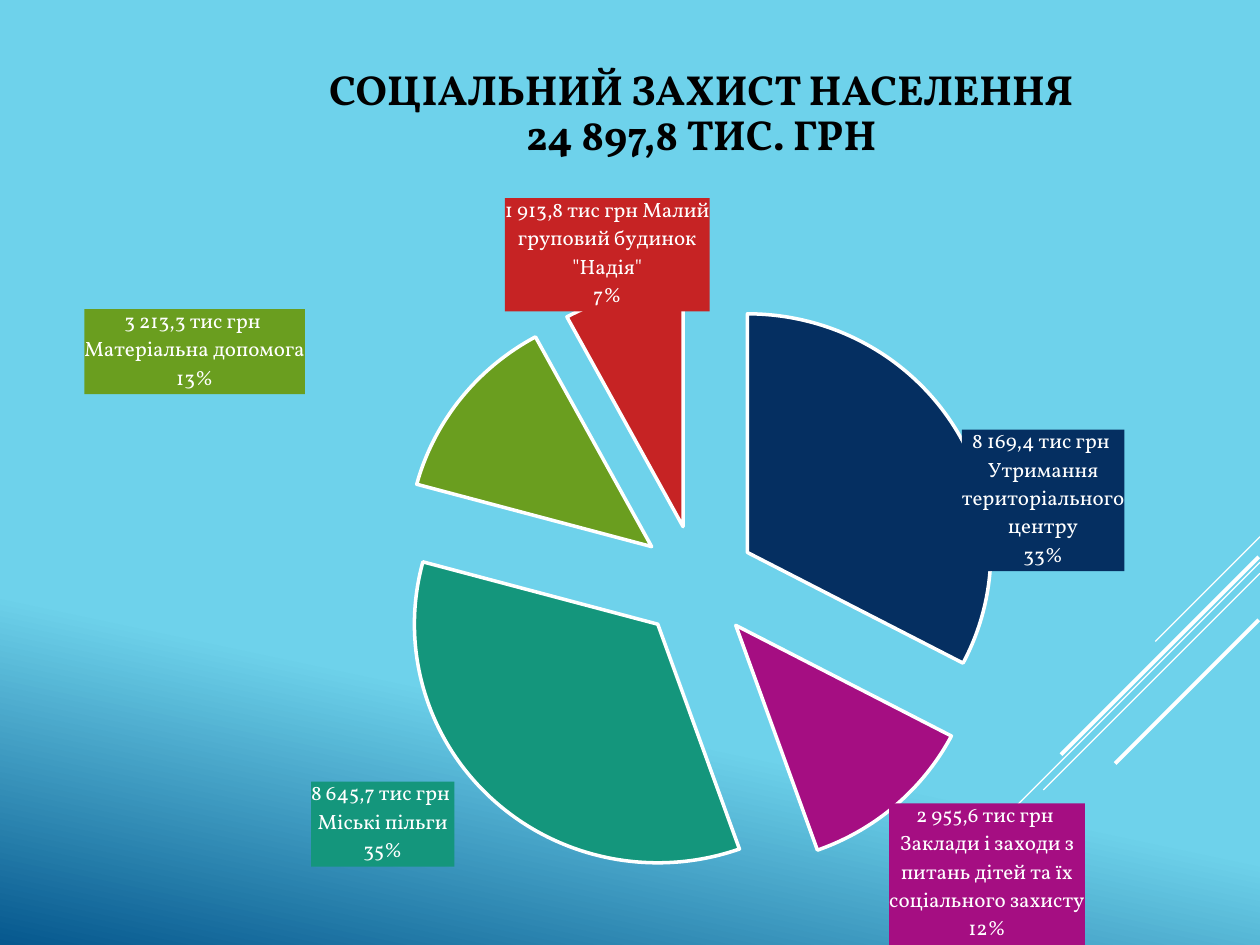
from lxml import etree
from pptx import Presentation
from pptx.chart.data import CategoryChartData
from pptx.dml.color import RGBColor
from pptx.enum.chart import XL_CHART_TYPE as CT, XL_LABEL_POSITION as LP
from pptx.enum.shapes import MSO_CONNECTOR
from pptx.enum.text import MSO_ANCHOR, PP_ALIGN
from pptx.oxml import parse_xml
from pptx.oxml.ns import nsdecls, qn
from pptx.util import Pt

FONT = "Vollkorn"
WHITE = RGBColor(0xFF, 0xFF, 0xFF)
BLACK = RGBColor(0x00, 0x00, 0x00)
SKY = RGBColor(0x6E, 0xD2, 0xEB)
DEEP = RGBColor(0x06, 0x58, 0x8E)
NAVY = RGBColor(0x05, 0x2F, 0x61)
PURPLE = RGBColor(0xA5, 0x0E, 0x82)
TEAL = RGBColor(0x14, 0x96, 0x7C)
GREEN = RGBColor(0x6A, 0x9E, 0x1F)
ORANGE = RGBColor(0xE8, 0x7D, 0x37)
RED = RGBColor(0xC6, 0x23, 0x24)


def manual_layout(inner="", **values):
    """Return a c:layout element with the given fractions of the chart."""
    parts = "".join(f'<c:{k} val="{v}"/>' for k, v in values.items())
    return parse_xml(f'<c:layout {nsdecls("c")}><c:manualLayout>{inner}{parts}'
                     '</c:manualLayout></c:layout>')


prs = Presentation()
prs.slide_width, prs.slide_height = Pt(720), Pt(540)
s = prs.slides.add_slide(prs.slide_layouts[6])

# Background gradient
bg = s.background.fill
bg.gradient()
bg.gradient_angle = 258
for stop, (pos, color) in zip(bg.gradient_stops, [(0.71, SKY), (1, DEEP)]):
    stop.position = pos
    stop.color.rgb = color

# Diagonal lines at 45 degrees: right end, horizontal run, width
for x, y, run, width in [(720, 306.7, 59.8, 0.75), (720, 321.3, 194.7, 0.75),
                         (720, 327.6, 123.8, 0.75), (719.3, 318.2, 113, 2.25),
                         (719.3, 354.2, 82.1, 2.25)]:
    ln = s.shapes.add_connector(MSO_CONNECTOR.STRAIGHT, Pt(x), Pt(y),
                                Pt(x - run), Pt(y + run))
    ln.line.color.rgb = WHITE
    ln.line.width = Pt(width)
    etree.SubElement(ln._element.spPr, qn("a:effectLst"))

# Title
sp = s.shapes.add_textbox(Pt(121.7), Pt(26), Pt(558), Pt(79))
tf = sp.text_frame
tf.word_wrap = True
tf.vertical_anchor = MSO_ANCHOR.MIDDLE
p = tf.paragraphs[0]
p.alignment = PP_ALIGN.CENTER
p.line_spacing = 0.9
for i, line in enumerate(["СОЦІАЛЬНИЙ ЗАХИСТ НАСЕЛЕННЯ", "24 897,8 ТИС. ГРН"]):
    if i:
        p.add_line_break()
    r = p.add_run()
    r.text = line
    r.font.name, r.font.size, r.font.bold = FONT, Pt(24), True
    r.font.color.rgb = BLACK

# Slices: category, value, colour, label lines, label shift (fractions of chart)
slices = [
    ("Утримання територіального центру", 33, NAVY,
     ["8 169,4 тис грн ", "Утримання територіального центру", "33%"], (0, 0.19)),
    ("Заклади і заходи з питань дітей та їх соціального захисту", 12, PURPLE,
     ["2 955,6 тис грн  Заклади і заходи з питань дітей та їх соціального захисту",
      "12%"], (-0.01, -0.01)),
    ("Міські пільги", 35, TEAL,
     ["8 645,7 тис грн ", "Міські пільги", "35%"], (-0.03, -0.03)),
    ("Матеріальна допомога", 13, GREEN,
     ["3 213,3 тис грн ", "Матеріальна допомога", "13%"], (-0.14, 0)),
    ("", None, ORANGE, [], None),
    ('Малий груповий будинок "Надія"', 8, RED,
     ['1 913,8 тис грн Малий груповий будинок "Надія"', "7%"], (0.08, 0.03)),
]

# Pie chart
data = CategoryChartData()
data.categories = [row[0] for row in slices]
data.add_series("Series 1", [row[1] for row in slices])
chart = s.shapes.add_chart(CT.PIE, Pt(48.2), Pt(100), Pt(631.4), Pt(448),
                           data).chart
chart.has_title = chart.has_legend = False
chart.font.name, chart.font.size = FONT, Pt(10)
chart.font.color.rgb = WHITE
plot = chart.plots[0]
plot.vary_by_categories = True
series = plot.series[0]
area = chart._chartSpace.find(".//" + qn("c:plotArea"))
for old in area.findall(qn("c:layout")):
    area.remove(old)
area.insert(0, manual_layout(
    '<c:layoutTarget val="inner"/><c:xMode val="edge"/><c:yMode val="edge"/>',
    x=0.17, y=0.125, w=0.77, h=0.77))

# Series labels are off; each slice has its own
labels = series.data_labels
labels.show_value = False
labels.font.name, labels.font.size = FONT, Pt(12)
labels.font.color.rgb = WHITE

for i, (_, _, color, lines, shift) in enumerate(slices):
    point = series.points[i]
    point.format.fill.solid()
    point.format.fill.fore_color.rgb = color
    point.format.line.color.rgb = WHITE
    point.format.line.width = Pt(2)
    if not lines:
        continue
    label = point.data_label
    label.font.name, label.font.size = FONT, Pt(12)
    label.font.color.rgb = WHITE
    label.position = LP.OUTSIDE_END
    tf = label.text_frame
    for n, line in enumerate(lines):
        p = tf.add_paragraph() if n else tf.paragraphs[0]
        r = p.add_run()
        r.text = line
        r.font.name, r.font.size, r.font.bold = FONT, Pt(12), False
        r.font.color.rgb = WHITE
    # Box colour and shift of the label
    tx = tf._txBody.getparent()
    tx.addnext(parse_xml(
        f'<c:spPr {nsdecls("c", "a")}><a:solidFill><a:srgbClr val="{color}"/>'
        '</a:solidFill></c:spPr>'))
    tx.addprevious(manual_layout(x=shift[0], y=shift[1]))
    for flag, val in [("showVal", 0), ("showCatName", 1), ("showPercent", 1)]:
        tx.getparent().find(qn("c:" + flag)).set("val", str(val))

# Exploded slices, wrapped labels, no leader lines
ser = series._element
ser.find(qn("c:dPt")).addprevious(
    parse_xml(f'<c:explosion {nsdecls("c")} val="24"/>'))
for body in ser.iter(qn("a:bodyPr")):
    body.set("wrap", "square")
for leader in ser.iter(qn("c:showLeaderLines")):
    leader.set("val", "0")

prs.save("out.pptx")
